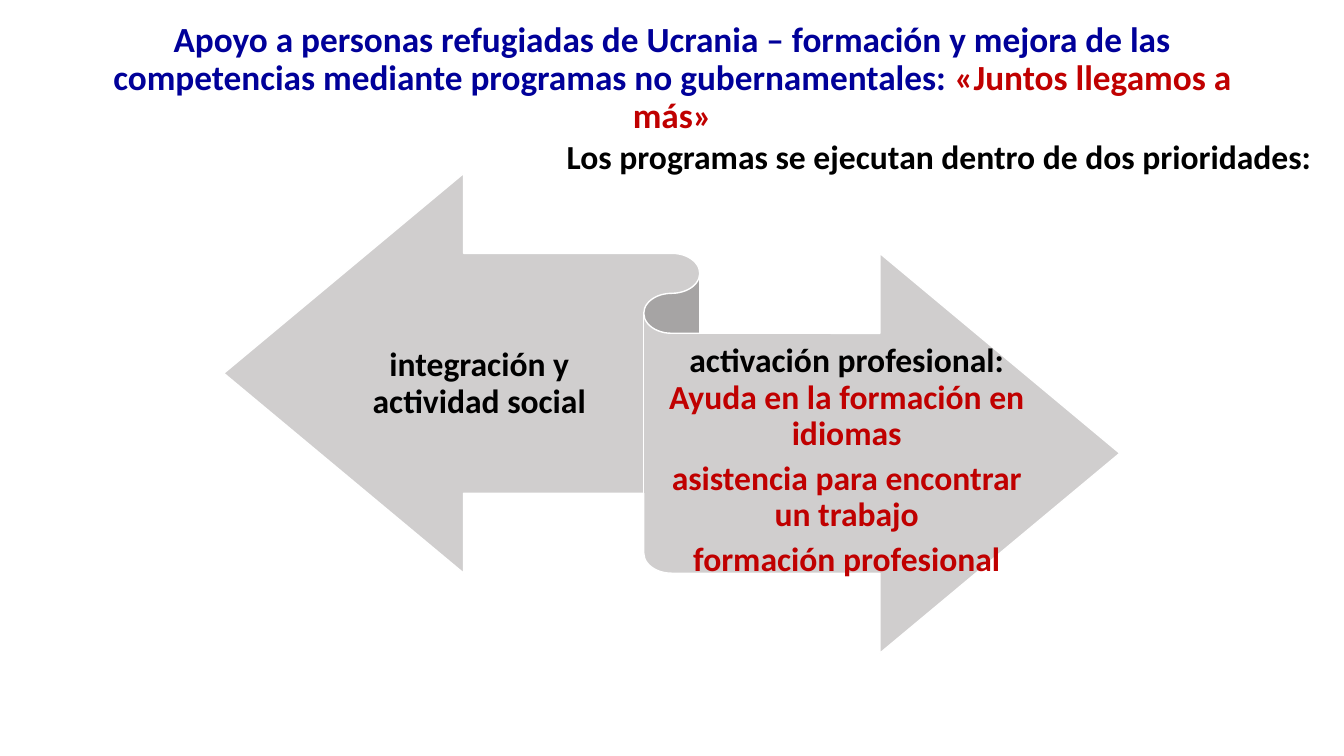
from pptx import Presentation
from pptx.dml.color import RGBColor
from pptx.enum.shapes import MSO_SHAPE
from pptx.enum.text import MSO_ANCHOR, PP_ALIGN
from pptx.util import Cm, Pt

BLACK, BLUE, RED = "000000", "000099", "C00000"
GREY, WHITE = "D0CECE", "FFFFFF"


def color(hex_string):
    return RGBColor.from_string(hex_string)


class SlideBuilder:
    """Holds the text style and the current slide."""
    font_name = "Calibri"
    line_spacing = 0.9

    def __init__(self, slide):
        self.slide = slide

    def text(self, box, paragraphs, size=24, align=PP_ALIGN.CENTER,
             anchor=MSO_ANCHOR.MIDDLE, insets=(0.25, 0.13), space_after=0):
        """Each paragraph is a list of (wording, colour) pairs."""
        frame = self.slide.shapes.add_textbox(*map(Cm, box)).text_frame
        frame.word_wrap = True
        frame.vertical_anchor = anchor
        frame.margin_left = frame.margin_right = Cm(insets[0])
        frame.margin_top = frame.margin_bottom = Cm(insets[1])
        for index, pieces in enumerate(paragraphs):
            paragraph = frame.paragraphs[0] if index == 0 else frame.add_paragraph()
            paragraph.alignment = align
            paragraph.line_spacing = self.line_spacing
            paragraph.space_after = Pt(space_after)
            for wording, hex_string in pieces:
                run = paragraph.add_run()
                run.text = wording
                run.font.name = self.font_name
                run.font.size = Pt(size)
                run.font.bold = True
                run.font.color.rgb = color(hex_string)

    def ribbon(self, box, fill, outline):
        ribbon = self.slide.shapes.add_shape(MSO_SHAPE.LEFT_RIGHT_RIBBON, *map(Cm, box))
        ribbon.shadow.inherit = False
        ribbon.fill.solid()
        ribbon.fill.fore_color.rgb = color(fill)
        ribbon.line.color.rgb = color(outline)
        ribbon.line.width = Pt(1)


def main():
    presentation = Presentation()
    presentation.slide_width, presentation.slide_height = Cm(33.87), Cm(19.05)
    builder = SlideBuilder(presentation.slides.add_slide(presentation.slide_layouts[6]))

    # Introduction to the two priorities
    builder.text((0.58, 3.4, 32.72, 13.11),
                 [[("Los programas se ejecutan dentro de dos prioridades:", BLACK)]],
                 align=PP_ALIGN.RIGHT, anchor=MSO_ANCHOR.TOP)

    # Title
    builder.text((2.34, 0.46, 29.21, 3.05),
                 [[("Apoyo a personas refugiadas de Ucrania – formación y mejora de las "
                    "competencias mediante programas no gubernamentales: ", BLUE),
                   ("«Juntos llegamos a más»", RED)]], size=25.2)

    # Two-way ribbon with one priority on each side
    builder.ribbon((5.64, 4.37, 22.58, 12.09), GREY, WHITE)
    builder.text((8.66, 7.47, 6.84, 4.42),
                 [[("integración y actividad social", BLACK)]], insets=(0, 0.24))
    builder.text((16.64, 8.23, 9.4, 6.78),
                 [[("activación profesional: ", BLACK),
                   ("Ayuda en la formación en idiomas", RED)],
                  [("asistencia para encontrar un trabajo", RED)],
                  [("formación profesional", RED)]],
                 insets=(0, 0.24), space_after=6)

    presentation.save("out.pptx")


if __name__ == "__main__":
    main()
